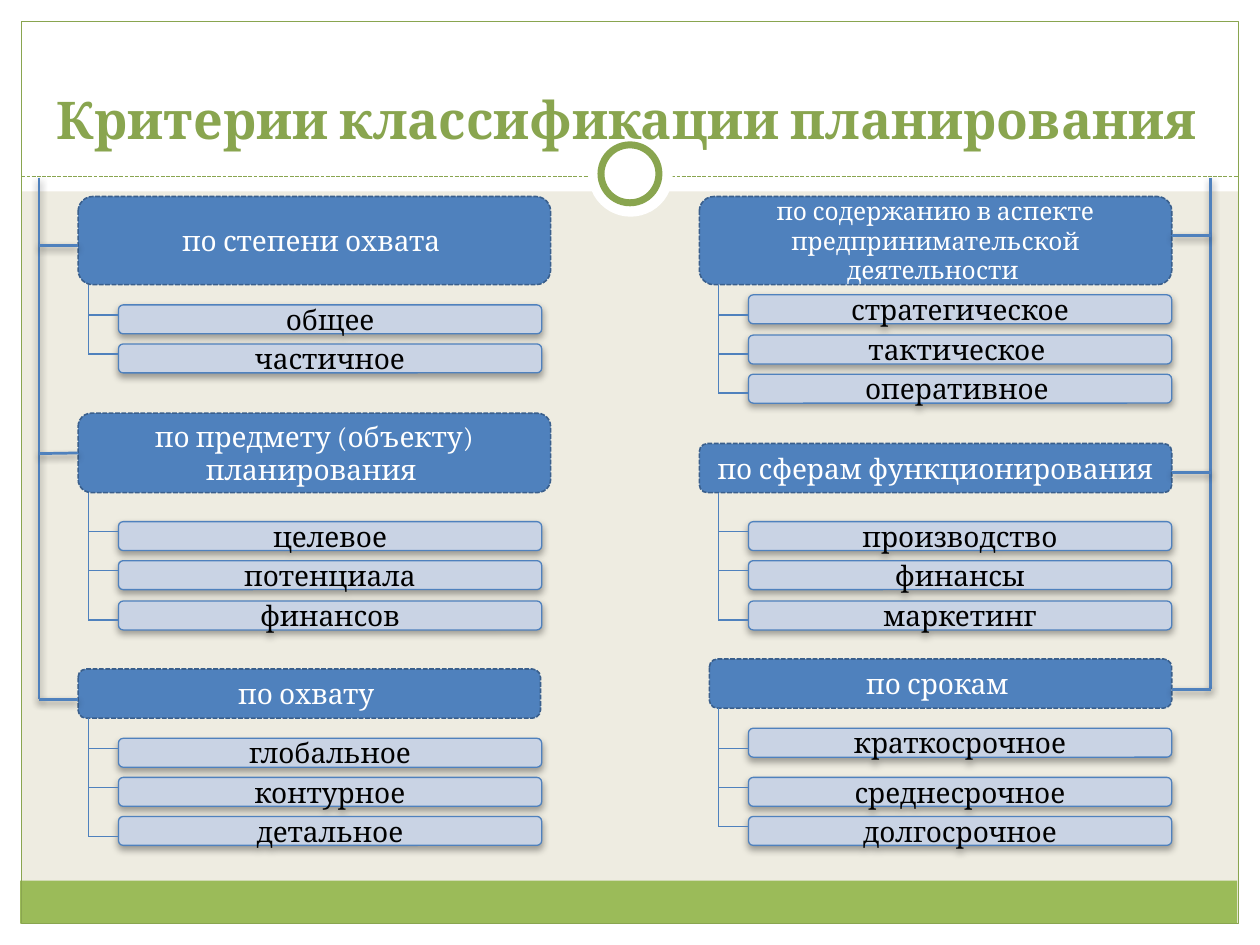
from dataclasses import dataclass
from typing import Optional

from lxml import etree
from pptx import Presentation
from pptx.dml.color import RGBColor
from pptx.enum import dml, shapes, text
from pptx.oxml import ns
from pptx.util import Inches, Pt

WHITE = RGBColor(0xFF, 0xFF, 0xFF)
BLACK = RGBColor(0x00, 0x00, 0x00)
CREAM = RGBColor(0xEE, 0xEC, 0xE1)
GREEN = RGBColor(0x9B, 0xBB, 0x59)
DARK_GREEN = RGBColor(0x89, 0xA5, 0x4F)
BLUE = RGBColor(0x4F, 0x81, 0xBD)
DARK_BLUE = RGBColor(0x3A, 0x5F, 0x8C)
PALE_BLUE = RGBColor(0xC9, 0xD3, 0xE4)
FONT = "Cambria"
DASH = dml.MSO_LINE.SQUARE_DOT
KIND = shapes.MSO_SHAPE
ITEM_WIDTH, ITEM_HEIGHT = 3.36, 0.23


@dataclass
class Item:
    label: str
    top: float
    branch: float


@dataclass
class Group:
    label: str
    left: float
    top: float
    width: float
    height: float
    branch: float
    items: list[Item]
    size: float = 16


@dataclass
class Column:
    spine: float
    trunk: float
    item_left: float
    side: int
    groups: list[Group]


COLUMNS = [
    Column(0.31, 0.7, 0.94, 1, [
        Group("по степени охвата ", 0.62, 1.56, 3.75, 0.7, 1.95, [
            Item("общее", 2.42, 2.5),
            Item("частичное", 2.73, 2.81)]),
        Group("по предмету (объекту) планирования ", 0.62, 3.28, 3.75, 0.63, 3.6, [
            Item("целевое", 4.14, 4.22),
            Item("потенциала", 4.45, 4.53),
            Item("финансов", 4.77, 4.92)]),
        Group("по охвату ", 0.62, 5.31, 3.67, 0.39, 5.55, [
            Item("глобальное", 5.86, 5.94),
            Item("контурное", 6.17, 6.25),
            Item("детальное", 6.48, 6.64)]),
    ]),
    Column(9.61, 5.7, 5.94, 3, [
        Group("по содержанию в аспекте предпринимательской деятельности ",
              5.55, 1.56, 3.75, 0.7, 1.87, [
                  Item("стратегическое", 2.34, 2.5),
                  Item("тактическое ", 2.66, 2.81),
                  Item("оперативное ", 2.97, 3.12)], size=14),
        Group("по сферам функционирования", 5.55, 3.52, 3.75, 0.39, 3.75, [
            Item("производство", 4.14, 4.22),
            Item("финансы", 4.45, 4.53),
            Item("маркетинг", 4.77, 4.92)]),
        Group("по срокам ", 5.63, 5.23, 3.67, 0.39, 5.47, [
            Item("краткосрочное", 5.78, 5.94),
            Item("среднесрочное", 6.17, 6.25),
            Item("долгосрочное", 6.48, 6.56)]),
    ]),
]


def add_shadow(effects, opacity: int) -> None:
    shadow = etree.SubElement(effects, ns.qn("a:outerShdw"), blurRad=str(Pt(4)),
                              dist=str(Pt(2)), dir="5400000", rotWithShape="0")
    color = etree.SubElement(shadow, ns.qn("a:srgbClr"), val=str(BLACK))
    etree.SubElement(color, ns.qn("a:alpha"), val=str(opacity * 1000))


def add_box(page, kind, left: float, top: float, width: float, height: float,
            fill: Optional[RGBColor] = None, line: Optional[RGBColor] = None,
            weight: float = 0.75, dash=None, shadow: bool = False):
    box = page.shapes.add_shape(kind, Inches(left), Inches(top),
                                Inches(width), Inches(height))
    if fill is None:
        box.fill.background()
    else:
        box.fill.solid()
        box.fill.fore_color.rgb = fill
    if line is None:
        box.line.fill.background()
    else:
        box.line.color.rgb = line
        box.line.width = Pt(weight)
        if dash is not None:
            box.line.dash_style = dash
    box.shadow.inherit = False
    if shadow:
        add_shadow(box._element.spPr.find(ns.qn("a:effectLst")), 35)
    return box


def write(box, label: str, size: float, color: RGBColor, bold: bool = False,
          anchor=text.MSO_ANCHOR.MIDDLE) -> None:
    frame = box.text_frame
    frame.word_wrap = True
    frame.vertical_anchor = anchor
    frame.text = label
    para = frame.paragraphs[0]
    para.alignment = text.PP_ALIGN.CENTER
    font = para.runs[0].font
    font.name = FONT
    font.size = Pt(size)
    font.bold = bold
    font.color.rgb = color


def add_line(page, x1: float, y1: float, x2: float, y2: float,
             color: RGBColor = BLUE, weight: float = 0.75, dash=None,
             shadow: bool = False):
    line = page.shapes.add_connector(shapes.MSO_CONNECTOR.STRAIGHT, Inches(x1),
                                     Inches(y1), Inches(x2), Inches(y2))
    line.line.color.rgb = color
    line.line.width = Pt(weight)
    if dash is not None:
        line.line.dash_style = dash
    effects = etree.SubElement(line._element.spPr, ns.qn("a:effectLst"))
    if shadow:
        add_shadow(effects, 45)
    return line


def draw_backdrop(page) -> None:
    page.background.fill.solid()
    page.background.fill.fore_color.rgb = CREAM
    for area in [(0, 7.33, 10, 0.17), (0, 0, 10, 1.52),
                 (0, 0, 0.17, 7.5), (9.83, 0, 0.17, 7.5)]:
        add_box(page, KIND.RECTANGLE, *area, fill=WHITE)
    add_box(page, KIND.RECTANGLE, 0.16, 6.99, 9.66, 0.34, fill=GREEN)
    add_box(page, KIND.RECTANGLE, 0.17, 0.17, 9.66, 7.16, line=DARK_GREEN)
    add_line(page, 0.17, 1.4, 9.83, 1.4, DARK_GREEN, dash=DASH)
    add_box(page, KIND.OVAL, 4.67, 1.05, 0.67, 0.67, fill=WHITE)
    add_box(page, KIND.OVAL, 4.77, 1.15, 0.46, 0.46, WHITE, DARK_GREEN, 4)


def draw_title(page) -> None:
    title = page.shapes.add_textbox(Inches(0.31), Inches(0.86), Inches(9.33), Inches(0.83))
    frame = title.text_frame
    frame.margin_left = frame.margin_right = frame.margin_top = Inches(0)
    frame.margin_bottom = Inches(0.51)
    write(title, "Критерии классификации планирования", 29.7, DARK_GREEN,
          bold=True, anchor=text.MSO_ANCHOR.BOTTOM)


def draw_group(page, column: Column, group: Group) -> None:
    heading = add_box(page, KIND.ROUNDED_RECTANGLE, group.left, group.top, group.width,
                      group.height, BLUE, DARK_BLUE, 0.9, DASH)
    write(heading, group.label, group.size, WHITE)
    edge = group.left if column.side == 1 else group.left + group.width
    link = add_line(page, column.spine, group.branch, edge, group.branch,
                    weight=1.57, shadow=True)
    if abs(group.top + group.height / 2 - group.branch) < 0.01:
        link.end_connect(heading, column.side)
    add_line(page, column.trunk, group.top + group.height,
             column.trunk, group.items[-1].branch)
    for item in group.items:
        box = add_box(page, KIND.ROUNDED_RECTANGLE, column.item_left, item.top,
                      ITEM_WIDTH, ITEM_HEIGHT, PALE_BLUE, BLUE, shadow=True)
        write(box, item.label, 16, BLACK)
        add_line(page, column.trunk, item.branch, column.item_left, item.branch)


def main() -> None:
    deck = Presentation()
    deck.slide_width, deck.slide_height = Inches(10), Inches(7.5)
    page = deck.slides.add_slide(deck.slide_layouts[6])
    draw_backdrop(page)
    draw_title(page)
    for column in COLUMNS:
        add_line(page, column.spine, 1.41, column.spine, column.groups[-1].branch,
                 weight=1.57, shadow=True)
        for group in column.groups:
            draw_group(page, column, group)
    deck.save("out.pptx")


if __name__ == "__main__":
    main()
